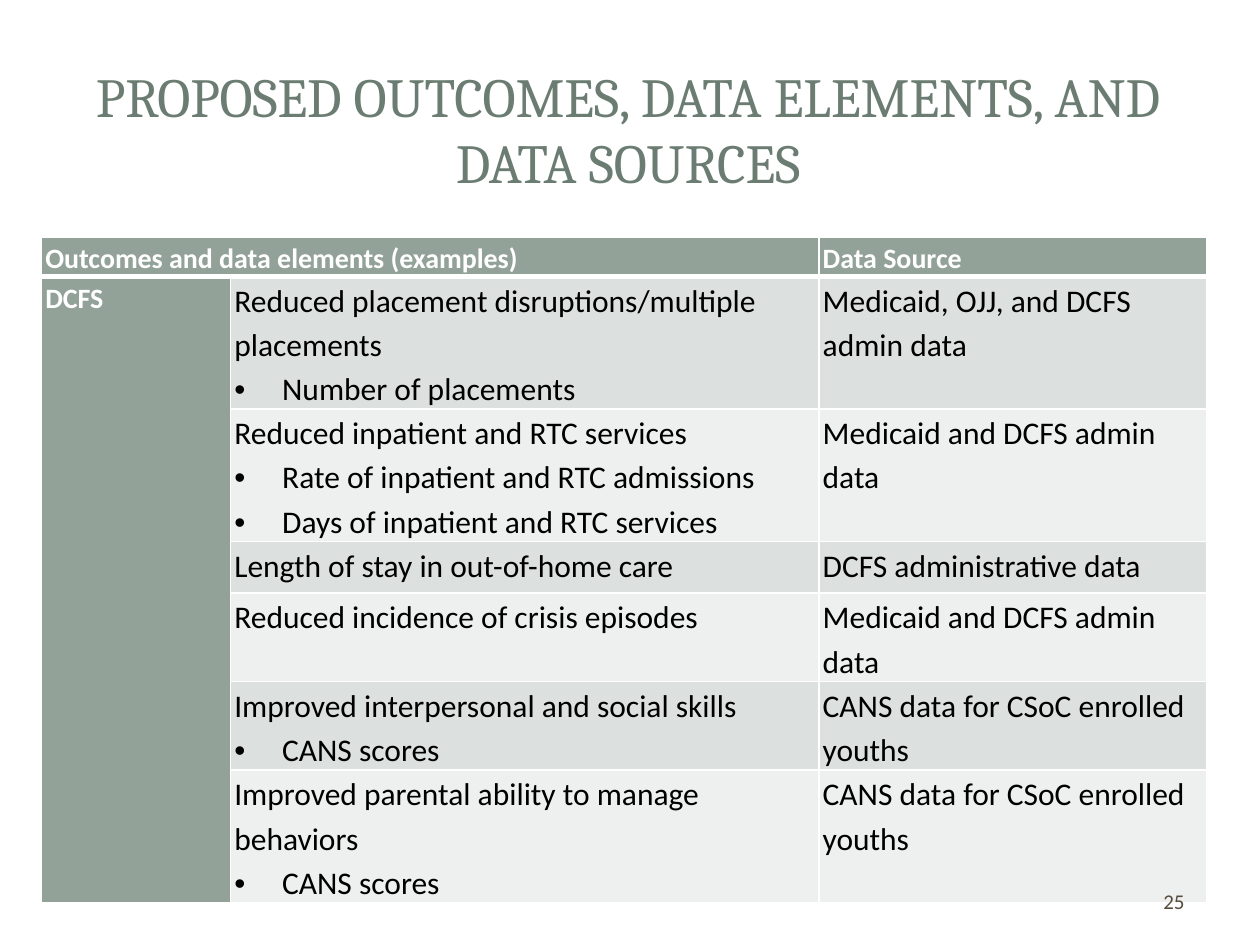
import pptx
import pptx.dml.color
import pptx.enum.shapes
import pptx.enum.text
import pptx.oxml
import pptx.oxml.ns
import pptx.util
from pptx.util import Inches

ALIGN = pptx.enum.text.PP_ALIGN
MIDDLE = pptx.enum.text.MSO_ANCHOR.MIDDLE
SHAPE = pptx.enum.shapes.MSO_SHAPE
BULLET = "• "

# Column and row sizes in inches; rows grow to fit their text
COLUMNS = [1.5, 4.67, 3.08]
ROWS = [0.2, 0.46, 0.76, 0.41, 0.3, 0.41, 0.46]

# Each outcome: its lines (bulleted ones are data elements) and its source
OUTCOMES = [
    (["Reduced placement disruptions/multiple placements",
      "• Number of placements"], "Medicaid, OJJ, and DCFS admin data"),
    (["Reduced inpatient and RTC services",
      "• Rate of inpatient and RTC admissions",
      "• Days of inpatient and RTC services"], "Medicaid and DCFS admin data"),
    (["Length of stay in out-of-home care"], "DCFS administrative data"),
    (["Reduced incidence of crisis episodes"], "Medicaid and DCFS admin data"),
    (["Improved interpersonal and social skills",
      "• CANS scores"], "CANS data for CSoC enrolled youths"),
    (["Improved parental ability to manage behaviors",
      "• CANS scores"], "CANS data for CSoC enrolled youths"),
]


def color(value):
    return pptx.dml.color.RGBColor.from_string(value)


def add_xml(parent, xml):
    namespace = pptx.oxml.ns.nsdecls("a")
    parent.append(pptx.oxml.parse_xml(xml.replace(" NS", " " + namespace, 1)))


def make_bullet(para):
    properties = para._p.get_or_add_pPr()
    properties.set("marL", str(Inches(0.38)))
    properties.set("indent", str(-Inches(0.38)))
    add_xml(properties, '<a:buFont NS typeface="Arial"/>')
    add_xml(properties, '<a:buChar NS char="•"/>')


def write(frame, lines, font="Calibri", size=18, ink="000000", bold=False,
          align=None, spacing=None, anchor=None):
    frame.word_wrap = True
    if anchor is not None:
        frame.vertical_anchor = anchor
    for index, line in enumerate(lines):
        para = frame.add_paragraph() if index else frame.paragraphs[0]
        para.alignment = align
        para.line_spacing = spacing
        if line.startswith(BULLET):
            make_bullet(para)
        span = para.add_run()
        span.text = line.removeprefix(BULLET)
        span.font.name = font
        span.font.size = pptx.util.Pt(size)
        span.font.bold = bold
        span.font.color.rgb = color(ink)


class SlideBuilder:
    header_fill = "93A299"
    band_fills = ["DCE0DE", "EEF0EF"]
    white = "FFFFFF"

    def __init__(self, deck):
        self.page = deck.slides.add_slide(deck.slide_layouts[5])

    def panel(self, kind, left, top, width, height, corner=None, opacity=100):
        shape = self.page.shapes.add_shape(
            kind, Inches(left), Inches(top), Inches(width), Inches(height))
        shape.shadow.inherit = False
        shape.line.fill.background()
        shape.fill.solid()
        shape.fill.fore_color.rgb = color(self.white)
        if corner is not None:
            shape.adjustments[0] = corner
        if opacity < 100:
            tint = shape._element.spPr.find(".//" + pptx.oxml.ns.qn("a:srgbClr"))
            add_xml(tint, f'<a:alpha NS val="{opacity * 1000}"/>')

    def title(self, text, left, top, width, height):
        box = self.page.shapes.title
        # Bring the title in front of the panels
        self.page.shapes._spTree.append(box._element)
        box.left, box.top = Inches(left), Inches(top)
        box.width, box.height = Inches(width), Inches(height)
        box.text_frame.auto_size = pptx.enum.text.MSO_AUTO_SIZE.NONE
        write(box.text_frame, [text], font="Cambria", size=31.5,
              ink="6B7D72", align=ALIGN.CENTER, anchor=MIDDLE)

    def text(self, text, left, top, width, height, **style):
        box = self.page.shapes.add_textbox(
            Inches(left), Inches(top), Inches(width), Inches(height))
        write(box.text_frame, [text], **style)

    def table(self, left, top, width, height):
        holder = self.page.shapes.add_table(
            len(ROWS), len(COLUMNS), Inches(left), Inches(top),
            Inches(width), Inches(height))
        table = holder.table
        for column, size in zip(table.columns, COLUMNS):
            column.width = Inches(size)
        for row, size in zip(table.rows, ROWS):
            row.height = Inches(size)
        holder.height = Inches(height)
        table.cell(0, 0).merge(table.cell(0, 1))
        table.cell(1, 0).merge(table.cell(len(ROWS) - 1, 0))
        return table

    def cell(self, cell, lines, fill, bottom=1, **style):
        cell.margin_left = cell.margin_right = Inches(0.03)
        cell.margin_top = cell.margin_bottom = 0
        properties = cell._tc.get_or_add_tcPr()
        for side, points in zip("LRTB", [1, 1, 1, bottom]):
            add_xml(properties,
                    f'<a:ln{side} NS w="{pptx.util.Pt(points)}"><a:solidFill>'
                    f'<a:srgbClr val="{self.white}"/></a:solidFill></a:ln{side}>')
        cell.fill.solid()
        cell.fill.fore_color.rgb = color(fill)
        write(cell.text_frame, lines, spacing=1.15, **style)

    def header(self, cell, lines, bottom=1):
        self.cell(cell, lines, self.header_fill, bottom,
                  size=16, ink=self.white, bold=True)


def main():
    deck = pptx.Presentation()
    deck.slide_width, deck.slide_height = Inches(10), Inches(7.5)
    slide = SlideBuilder(deck)

    # Background panels
    slide.panel(SHAPE.ROUNDED_RECTANGLE, 0.1, 0.11, 9.8, 7.29, corner=0.017)
    slide.panel(SHAPE.RECTANGLE, 0.3, 0.3, 9.4, 1.45, opacity=83)
    slide.panel(SHAPE.RECTANGLE, 0.41, 0.41, 9.17, 1.22)

    # Title
    slide.title("PROPOSED OUTCOMES, DATA ELEMENTS, AND DATA SOURCES",
                0.47, 0.45, 9.03, 1.14)

    # Table header and agency column
    table = slide.table(0.33, 1.88, 9.25, 5.08)
    headings = ["Outcomes and data elements (examples)", None, "Data Source"]
    for index, heading in enumerate(headings):
        slide.header(table.cell(0, index), [heading] if heading else [], bottom=3)

    # Outcomes with their sources, in alternating bands
    for row, (lines, source) in enumerate(OUTCOMES, start=1):
        slide.header(table.cell(row, 0), ["DCFS"] if row == 1 else [])
        fill = slide.band_fills[(row - 1) % 2]
        slide.cell(table.cell(row, 1), lines, fill)
        slide.cell(table.cell(row, 2), [source], fill)

    # Page number
    slide.text("25", 7.17, 6.95, 2.33, 0.4, size=12, ink="564B3C",
               align=ALIGN.RIGHT, anchor=MIDDLE)

    deck.save("out.pptx")


if __name__ == "__main__":
    main()
